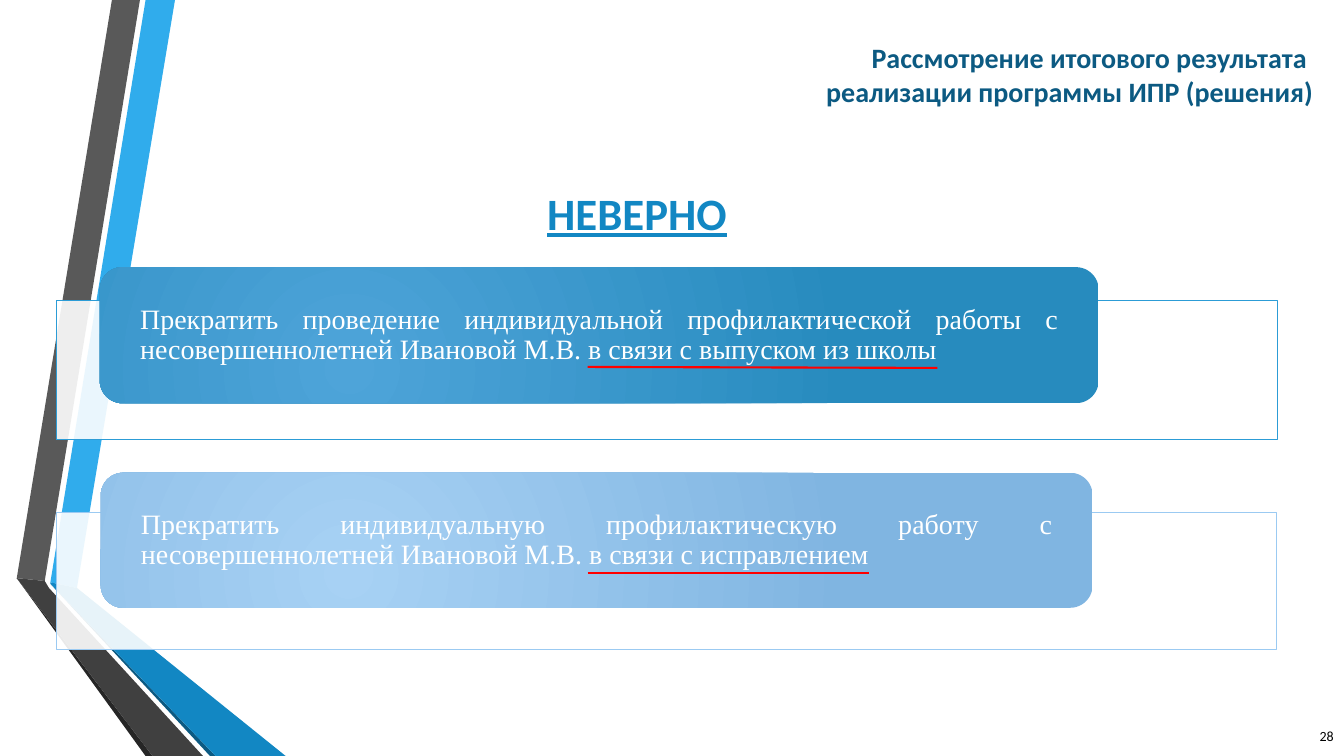
from lxml import etree
from pptx import Presentation
from pptx.dml.color import RGBColor
from pptx.enum.shapes import MSO_CONNECTOR, MSO_SHAPE
from pptx.enum.text import MSO_ANCHOR, MSO_AUTO_SIZE, PP_ALIGN
from pptx.oxml.ns import qn
from pptx.util import Pt

RECT, ROUND_RECT = MSO_SHAPE.RECTANGLE, MSO_SHAPE.ROUNDED_RECTANGLE
STRAIGHT = MSO_CONNECTOR.STRAIGHT
TOP, MIDDLE = MSO_ANCHOR.TOP, MSO_ANCHOR.MIDDLE
LEFT, RIGHT, JUSTIFY = PP_ALIGN.LEFT, PP_ALIGN.RIGHT, PP_ALIGN.JUSTIFY
NO_FIT = MSO_AUTO_SIZE.NONE

WHITE = RGBColor(0xFF, 0xFF, 0xFF)
BLACK = RGBColor(0, 0, 0)
RED = RGBColor(0xFF, 0, 0)
SKY = RGBColor(0x30, 0xAC, 0xEC)
BLUE = RGBColor(0x12, 0x87, 0xC3)
NAVY = RGBColor(0x0C, 0x5A, 0x82)
GREY = RGBColor(0x59, 0x59, 0x59)
DARK_GREY = RGBColor(0x40, 0x40, 0x40)
CHARCOAL = RGBColor(0x26, 0x26, 0x26)
FRAME_BLUE = RGBColor(0x2C, 0x9C, 0xD6)
FRAME_PALE = RGBColor(0x9B, 0xCA, 0xF2)
CARD_BLUE = (RGBColor(0x4E, 0xA4, 0xD9), RGBColor(0x27, 0x8B, 0xBE))
CARD_PALE = (RGBColor(0xA7, 0xD1, 0xF4), RGBColor(0x80, 0xB5, 0xE1))

RIBBONS = [
    (SKY, [(36, 416.2), (55.4, 419.8), (124.6, 0), (104.4, 0)]),
    (GREY, [(100.1, 0), (79.9, 0), (11.5, 412.6), (31.7, 415.4)]),
    (CHARCOAL, [(11.5, 412.6), (104.4, 540), (108.7, 540)]),
    (NAVY, [(36, 416.9), (149.8, 540), (154.1, 540)]),
    (BLUE, [(36, 416.2), (36, 416.9), (154.1, 540), (203.8, 540), (55.4, 419.8)]),
    (DARK_GREY, [(145.4, 540), (34.6, 419.8), (31.7, 415.4), (11.5, 412.6), (108.7, 540)]),
]

TITLE_FONT = dict(name="Calibri", size=Pt(20), bold=True)
VERDICT_FONT = dict(name="Calibri", size=Pt(32), bold=True, underline=True)
NUMBER_FONT = dict(name="Calibri", size=Pt(10))
CARD_FONT = dict(name="Times New Roman", size=Pt(20))

DECISIONS = [
    dict(text="Прекратить проведение индивидуальной профилактической работы с "
              "несовершеннолетней Ивановой М.В. в связи с выпуском из школы",
         frame=(40.3, 214.6, 872, 99.4), frame_color=FRAME_BLUE,
         card=(71.3, 190.8, 713.5, 97.2), card_colors=CARD_BLUE,
         underline=(419.8, 262.1, 669.6, 262.8)),
    dict(text="Прекратить индивидуальную профилактическую работу с "
              "несовершеннолетней Ивановой М.В. в связи с исправлением",
         frame=(40.3, 365.8, 871.2, 97.9), frame_color=FRAME_PALE,
         card=(72, 337.7, 708.5, 96.5), card_colors=CARD_PALE,
         underline=(419.8, 409.4, 620.6, 409.4)),
]


def write(s, text, font, color, align, anchor=MIDDLE, wrap=True, **frame):
    tf = s.text_frame
    tf.auto_size = NO_FIT
    for name, value in dict(frame, word_wrap=wrap, vertical_anchor=anchor).items():
        setattr(tf, name, value)
    p = tf.paragraphs[0]
    p.text = text
    p.alignment = align
    for r in p.runs:
        for name, value in font.items():
            setattr(r.font, name, value)
        r.font.color.rgb = color
    return p


def add_ribbon(sp, color, points):
    builder = sp.build_freeform(*points[0], scale=Pt(1))
    builder.add_line_segments(points[1:], close=True)
    s = builder.convert_to_shape()
    s.shadow.inherit = False
    s.fill.solid()
    s.fill.fore_color.rgb = color
    s.line.fill.background()


def add_frame(sp, box, color):
    s = sp.add_shape(RECT, *map(Pt, box))
    s.shadow.inherit = False
    s.fill.solid()
    s.fill.fore_color.rgb = WHITE
    fill_color = s._element.spPr.find(qn("a:solidFill"))[0]
    etree.SubElement(fill_color, qn("a:alpha"), val="90000")
    s.line.color.rgb = color
    s.line.width = Pt(0.75)


def add_card(sp, box, colors, text):
    s = sp.add_shape(ROUND_RECT, *map(Pt, box))
    s.shadow.inherit = False
    s.line.fill.background()
    s.fill.gradient()
    for stop, color in zip(s.fill.gradient_stops, colors):
        stop.color.rgb = color
    gradient = s._element.spPr.find(qn("a:gradFill"))
    gradient.remove(gradient.find(qn("a:lin")))
    circle = etree.SubElement(gradient, qn("a:path"), path="circle")
    etree.SubElement(circle, qn("a:fillToRect"),
                     l="50000", t="100000", r="100000", b="50000")
    p = write(s, text, CARD_FONT, WHITE, JUSTIFY, margin_left=Pt(24),
              margin_right=Pt(24), margin_top=0, margin_bottom=0)
    p.line_spacing = 0.9


def add_underline(sp, ends):
    s = sp.add_connector(STRAIGHT, *map(Pt, ends))
    s.line.color.rgb = RED
    s.line.width = Pt(1.5)
    etree.SubElement(s._element.spPr, qn("a:effectLst"))


def add_label(sp, box, *args, **options):
    write(sp.add_textbox(*map(Pt, box)), *args, **options)


def set_title(s, text):
    s.left, s.top, s.width, s.height = map(Pt, (360.7, 14.4, 584.6, 101.5))
    write(s, text, TITLE_FONT, NAVY, RIGHT, margin_bottom=Pt(28))


def main():
    prs = Presentation()
    prs.slide_width, prs.slide_height = Pt(960), Pt(540)
    slide = prs.slides.add_slide(prs.slide_layouts[5])
    sp = slide.shapes
    for color, points in RIBBONS:
        add_ribbon(sp, color, points)
    set_title(sp.title, "Рассмотрение итогового результата \v"
                        "реализации программы ИПР (решения)")
    add_label(sp, (743.8, 511.2, 216, 28.8), "28", NUMBER_FONT, BLACK, RIGHT)
    for decision in DECISIONS:
        add_frame(sp, decision["frame"], decision["frame_color"])
        add_card(sp, decision["card"], decision["card_colors"], decision["text"])
    add_label(sp, (383.8, 128.9, 150, 46), "НЕВЕРНО", VERDICT_FONT, BLUE, LEFT,
              anchor=TOP, wrap=False)
    for decision in DECISIONS:
        add_underline(sp, decision["underline"])
    prs.save("out.pptx")


if __name__ == "__main__":
    main()
